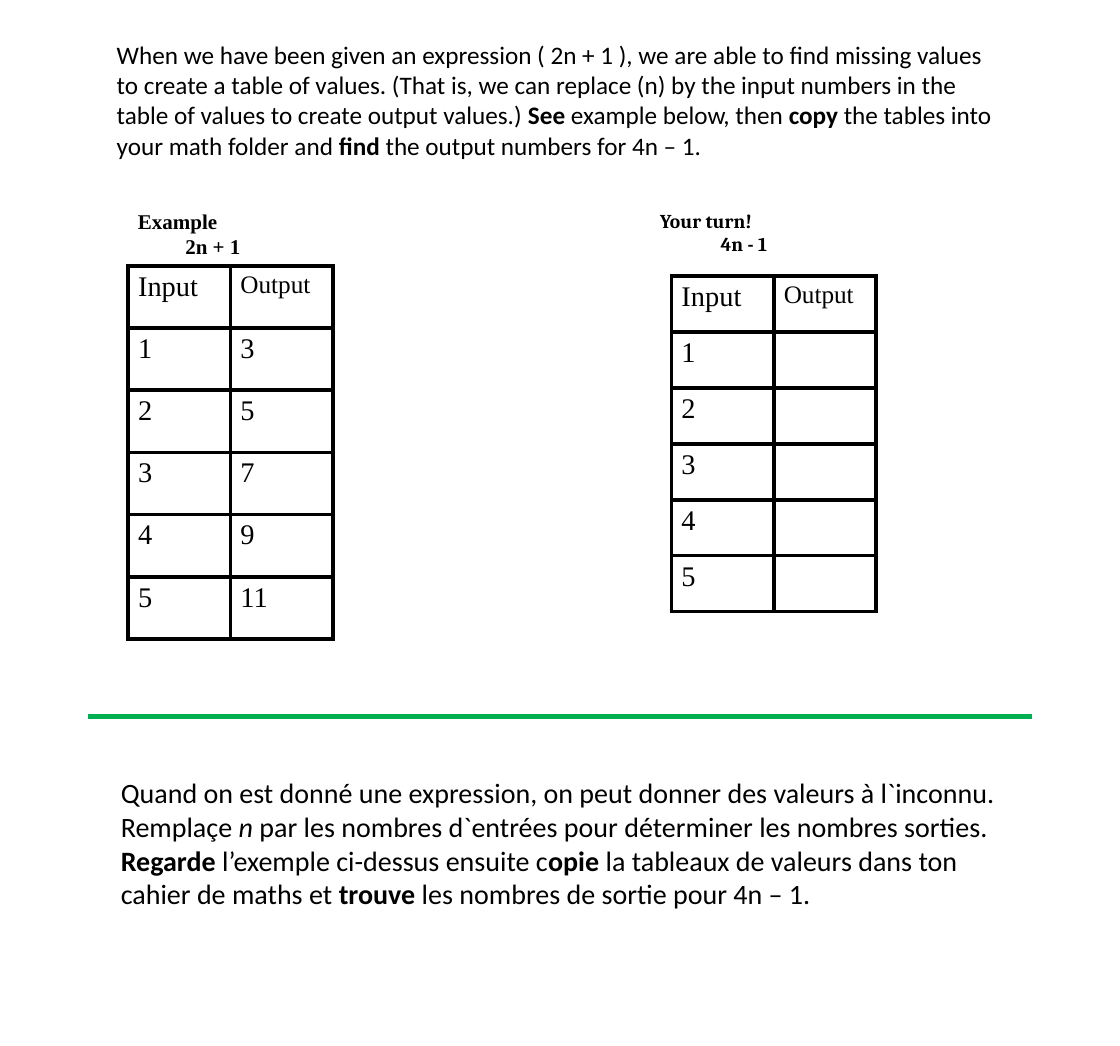
from lxml import etree
from pptx import Presentation
from pptx.dml.color import RGBColor
from pptx.enum import shapes, text
from pptx.oxml import ns
from pptx.util import Inches, Pt

COLORS = {"ink": "000000", "paper": "FFFFFF", "divider": "00B050"}
INK, PAPER, DIVIDER = (RGBColor.from_string(c) for c in COLORS.values())

prs = Presentation()
prs.slide_width, prs.slide_height = Inches(11.11), Inches(10.38)
slide = prs.slides.add_slide(prs.slide_layouts[6])


def style(paragraph, face, size, bold=None):
    font = paragraph.font
    font.name, font.size, font.bold = face, Pt(size), bold
    font.color.rgb = INK


def add_text(place, paragraphs, face, size, bold=None):
    """Add a text box; each paragraph is a list of (words, emphasis), emphasis being "", "b" or "i"."""
    frame = slide.shapes.add_textbox(*map(Inches, place)).text_frame
    frame.word_wrap = True
    frame.auto_size = text.MSO_AUTO_SIZE.SHAPE_TO_FIT_TEXT
    for i, pieces in enumerate(paragraphs):
        paragraph = frame.add_paragraph() if i else frame.paragraphs[0]
        style(paragraph, face, size, bold)
        for words, emphasis in pieces:
            run = paragraph.add_run()
            run.text = words
            if emphasis == "b":
                run.font.bold = True
            elif emphasis == "i":
                run.font.italic = True
    return frame


# Instructions in English and French
add_text((1.06, 0.34, 9, 1.31), [[
    ("When we have been given an expression ( 2n + 1 ), we are able to find missing values "
     "to create a table of values. (That is, we can replace (n) by the input numbers in the "
     "table of values to create output values.) ", ""),
    ("See", "b"), (" example below, then ", ""), ("copy", "b"),
    (" the tables into your math folder and ", ""), ("find", "b"),
    (" the output numbers for 4n – 1.", ""),
]], "Calibri", 18)

add_text((1.1, 7.65, 8.96, 1.45), [
    [("Quand on est donné une expression, on peut donner des valeurs à l`inconnu. Remplaçe ", ""),
     ("n", "i"),
     (" par les nombres d`entrées pour déterminer les nombres sorties.", "")],
    [("Regarde ", "b"), ("l’exemple ci-dessus ensuite c", ""), ("opie", "b"),
     (" la tableaux de valeurs dans ton cahier de maths et ", ""), ("trouve", "b"),
     (" les nombres de sortie pour 4n – 1.", "")],
], "Calibri", 20)

# Headings: the expression is indented under its label
headings = [
    ((1.27, 2.02, 1.89, 0.61), "Example", "2n + 1", "Times New Roman", 15, 0.47),
    ((6.45, 2.02, 2.61, 0.57), "Your turn!", "4n - 1", "Cambria", 14, 0.6),
]
for place, label, expression, face, size, indent in headings:
    heading = add_text(place, [[(label, "")], [(expression, "")]], face, size, True)
    heading.paragraphs[1]._p.get_or_add_pPr().set("marL", str(Inches(indent)))

# Tables of values
inputs = range(1, 6)
value_tables = [
    ((1.27, 2.64, 2.03, 3.7), [2 * n + 1 for n in inputs]),
    ((6.66, 2.74, 2.03, 3.33), [""] * len(inputs)),
]
for place, outputs in value_tables:
    rows = [("Input", "Output"), *zip(inputs, outputs)]
    table = slide.shapes.add_table(len(rows), 2, *map(Inches, place)).table
    table.first_row = table.horz_banding = False
    for r, row in enumerate(rows):
        for c, value in enumerate(row):
            cell = table.cell(r, c)
            cell.text = str(value)
            style(cell.text_frame.paragraphs[0], "Times New Roman",
                  18 if value == "Output" else 20.3)
            borders = cell._tc.get_or_add_tcPr()
            for side in ("lnL", "lnR", "lnT", "lnB"):
                border = etree.SubElement(borders, ns.qn(f"a:{side}"), w=str(Pt(3)))
                fill = etree.SubElement(border, ns.qn("a:solidFill"))
                etree.SubElement(fill, ns.qn("a:srgbClr"), val=COLORS["ink"])
            cell.fill.solid()
            cell.fill.fore_color.rgb = PAPER

# Divider between the two languages
divider = slide.shapes.add_connector(
    shapes.MSO_CONNECTOR.STRAIGHT, Inches(0.87), Inches(7.11), Inches(10.24), Inches(7.11))
divider.line.color.rgb = DIVIDER
divider.line.width = Pt(3)
etree.SubElement(divider._element.spPr, ns.qn("a:effectLst"))

prs.save("out.pptx")
